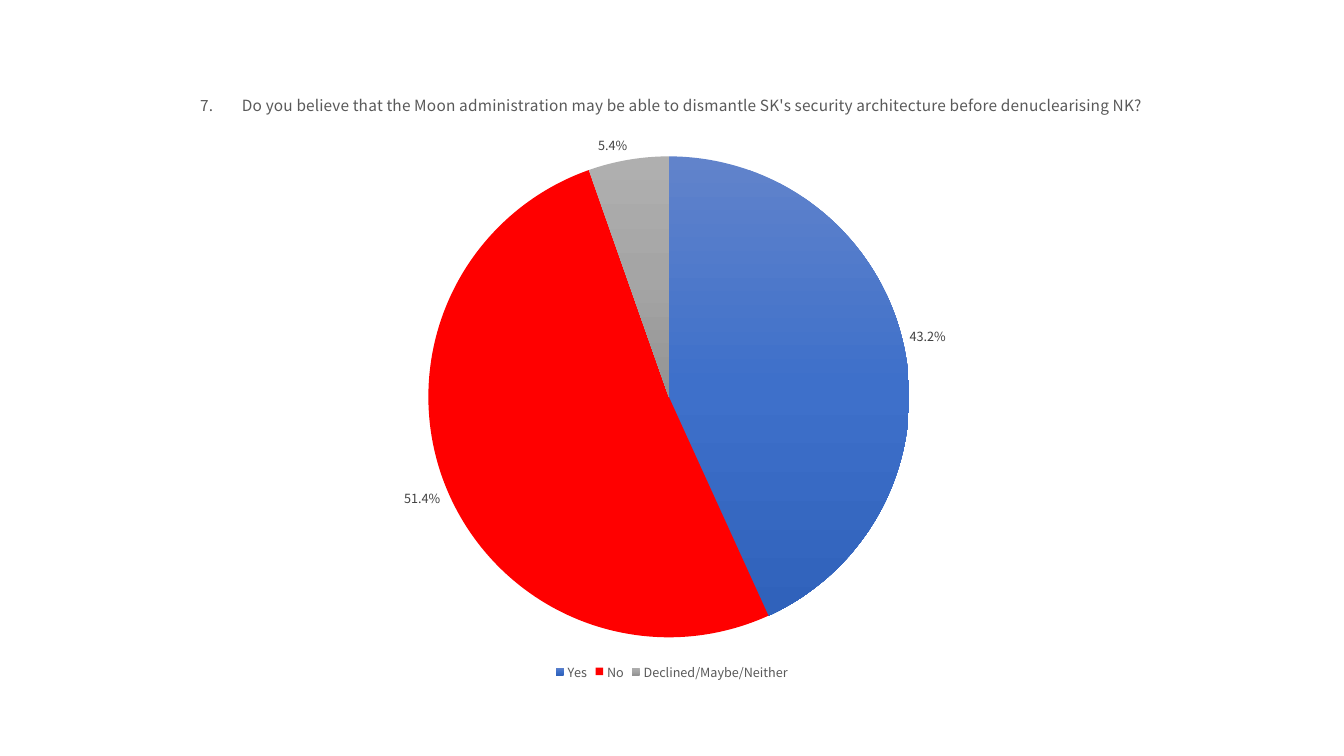
from copy import deepcopy
from pptx import Presentation
from pptx.chart.data import CategoryChartData
from pptx.dml.color import RGBColor
from pptx.enum.chart import XL_CHART_TYPE, XL_LABEL_POSITION, XL_LEGEND_POSITION
from pptx.util import Pt

face = "Noto Sans CJK KR"
hues = {
    "text": "595959",
    "label": "404040",
    "Yes": ["6183CB", "3E70CA", "3062BB"],
    "No": ["FF0000"],
    "Declined/Maybe/Neither": ["AFAFAF", "A5A5A5", "939393"],
}
votes = {"Yes": 0.432, "No": 0.514, "Declined/Maybe/Neither": 0.054}
query = (
    "Do you believe that the Moon administration may be able to dismantle "
    "SK's security architecture before denuclearising NK?"
)


def style(font, size, hue):
    form = {"name": face, "size": Pt(size), "bold": False}
    for key, value in form.items():
        setattr(font, key, value)
    font.color.rgb = RGBColor.from_string(hues[hue])


deck = Presentation()
deck.slide_width, deck.slide_height = Pt(960), Pt(540)
slide = deck.slides.add_slide(deck.slide_layouts[6])

data = CategoryChartData(number_format="0.0%")
data.categories = list(votes)
data.add_series("7. " + query, list(votes.values()))
frame = slide.shapes.add_chart(
    XL_CHART_TYPE.PIE, Pt(50.4), Pt(50.4), Pt(859), Pt(438.5), data
)
chart = frame.chart
chart.font.name, chart.font.size = face, Pt(10)

chart.has_title = True
line = chart.chart_title.text_frame.paragraphs[0]
for part in ("7.", " ", query):
    run = line.add_run()
    run.text = part
    style(run.font, 11, "text")
    if part == " ":
        run.font._element.set("spc", "1800")

chart.has_legend = True
legend = chart.legend
legend.position = XL_LEGEND_POSITION.BOTTOM
legend.include_in_layout = False
style(legend.font, 9, "text")

plot = chart.plots[0]
plot.vary_by_categories = True
plot.has_data_labels = True
labels = plot.data_labels
form = {
    "show_value": True,
    "show_percentage": False,
    "number_format": "0.0%",
    "number_format_is_linked": False,
    "position": XL_LABEL_POSITION.OUTSIDE_END,
}
for key, value in form.items():
    setattr(labels, key, value)
style(labels.font, 9, "label")

for spot, name in enumerate(votes):
    tones = hues[name]
    point = plot.series[0].points[spot]
    point.format.line.fill.background()
    fill = point.format.fill
    if len(tones) == 1:
        fill.solid()
        fill.fore_color.rgb = RGBColor.from_string(tones[0])
        continue
    fill.gradient()
    fill.gradient_angle = 270
    stops = chart.element.xpath(f".//c:dPt[c:idx/@val='{spot}']//a:gsLst")[0]
    stops.append(deepcopy(stops[-1]))
    for stop, tone, place in zip(fill.gradient_stops, tones, (0, 0.5, 1)):
        stop.color.rgb = RGBColor.from_string(tone)
        stop.position = place

deck.save("out.pptx")
